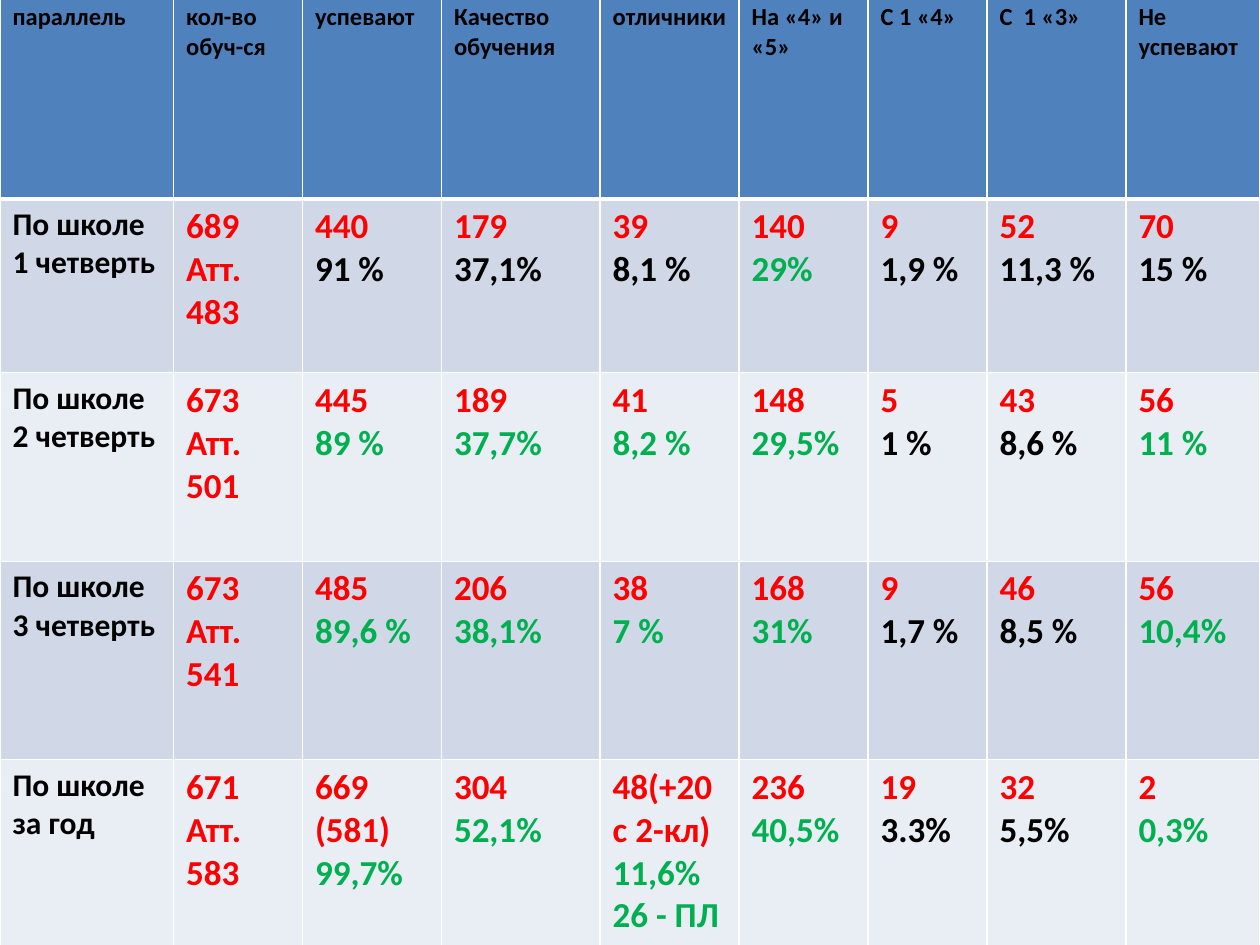
from lxml.etree import SubElement
from pptx import Presentation
from pptx.dml.color import RGBColor as Rgb
from pptx.oxml.ns import qn
from pptx.util import Pt

# Content
HEADERS = ["параллель", "кол-во\nобуч-ся", "успевают", "Качество\nобучения",
           "отличники", "На «4» и «5»", "С 1 «4»", "С  1 «3»", "Не успевают"]
# Each row: label, pupils, then (count, share, share colour) per column
ROWS = [
    ("По школе\n1 четверть", "689\nАтт. 483", [
        ("440", "91 %", "black"), ("179", "37,1%", "black"),
        ("39", "8,1 %", "black"), ("140", "29%", "green"),
        ("9", "1,9 %", "black"), ("52", "11,3 %", "black"),
        ("70", "15 %", "black")]),
    ("По школе\n2 четверть", "673\nАтт. 501", [
        ("445", "89 %", "green"), ("189", "37,7%", "green"),
        ("41", "8,2 %", "green"), ("148", "29,5%", "green"),
        ("5", "1 %", "black"), ("43", "8,6 %", "black"),
        ("56", "11 %", "green")]),
    ("По школе\n3 четверть", "673\nАтт. 541", [
        ("485", "89,6 %", "green"), ("206", "38,1%", "green"),
        ("38", "7 %", "green"), ("168", "31%", "green"),
        ("9", "1,7 %", "black"), ("46", "8,5 %", "black"),
        ("56", "10,4%", "green")]),
    ("По школе\nза год", "671\nАтт.\n583", [
        ("669 (581)", "99,7%", "green"), ("304", "52,1%", "green"),
        ("48(+20 с 2-кл)", "11,6%\n26 - ПЛ", "green"), ("236", "40,5%", "green"),
        ("19", "3.3%", "black"), ("32", "5,5%", "black"),
        ("2", "0,3%", "green")]),
]
COLORS = {"black": "000000", "red": "FF0000", "green": "00B050", "white": "FFFFFF",
          "header": "4F81BD", "odd": "D0D8E8", "even": "E9EDF4"}

# Sizes in points
SLIDE_WIDTH, SLIDE_HEIGHT = 720, 540
TABLE_TOP = -2.2
COLUMN_WIDTHS = [99.2, 73.7, 79.4, 90.7, 79.4, 73.7, 68, 79.4, 76.5]
ROW_HEIGHTS = [116, 99.2, 107.8, 113.4, 158.4]


def write_text(cell, text, size, color="black", append=False):
    """Write one bold paragraph per line of text."""
    frame = cell.text_frame
    for index, line in enumerate(text.split("\n")):
        is_first = index == 0 and not append
        para = frame.paragraphs[0] if is_first else frame.add_paragraph()
        span = para.add_run()
        span.text = line
        span.font.name = "Calibri"
        span.font.size = Pt(size)
        span.font.bold = True
        span.font.color.rgb = Rgb.from_string(COLORS[color])


def style_cell(cell, fill, top=1, bottom=1):
    """Give the cell white borders and a solid fill."""
    properties = cell._tc.get_or_add_tcPr()
    for side, width in (("L", 1), ("R", 1), ("T", top), ("B", bottom)):
        line = SubElement(properties, qn(f"a:ln{side}"), w=str(Pt(width)))
        solid = SubElement(line, qn("a:solidFill"))
        SubElement(solid, qn("a:srgbClr"), val=COLORS["white"])
    cell.fill.solid()
    cell.fill.fore_color.rgb = Rgb.from_string(COLORS[fill])


deck = Presentation()
deck.slide_width, deck.slide_height = Pt(SLIDE_WIDTH), Pt(SLIDE_HEIGHT)
page = deck.slides.add_slide(deck.slide_layouts[6])

# Table grid
table = page.shapes.add_table(
    len(ROW_HEIGHTS), len(COLUMN_WIDTHS), Pt(0), Pt(TABLE_TOP),
    Pt(sum(COLUMN_WIDTHS)), Pt(sum(ROW_HEIGHTS))).table
for column, width in zip(table.columns, COLUMN_WIDTHS):
    column.width = Pt(width)
for row, height in zip(table.rows, ROW_HEIGHTS):
    row.height = Pt(height)

# Header row
for cell, header in zip(table.rows[0].cells, HEADERS):
    style_cell(cell, "header", bottom=3)
    write_text(cell, header, size=14)

# Quarter and year rows
for number, (label, pupils, results) in enumerate(ROWS, start=1):
    cells = list(table.rows[number].cells)
    for cell in cells:
        style_cell(cell, "odd" if number % 2 else "even", top=3 if number == 1 else 1)
    write_text(cells[0], label, size=18)
    write_text(cells[1], pupils, size=20, color="red")
    for cell, (count, share, color) in zip(cells[2:], results):
        write_text(cell, count, size=20, color="red")
        write_text(cell, share, size=20, color=color, append=True)

deck.save("out.pptx")
